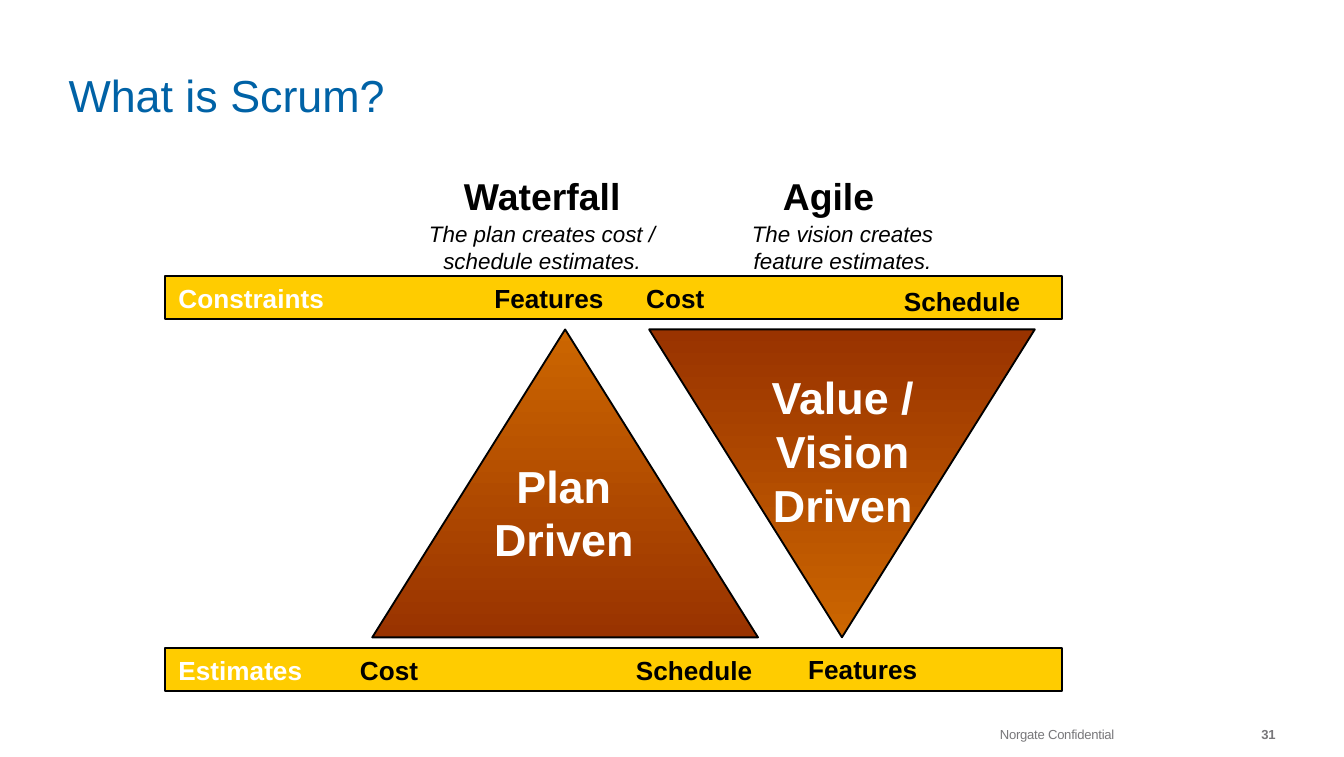
from pptx import Presentation
from pptx.dml.color import RGBColor
from pptx.enum.shapes import MSO_SHAPE
from pptx.enum.text import MSO_ANCHOR, PP_ALIGN
from pptx.util import Inches, Pt

BLACK = RGBColor(0x00, 0x00, 0x00)
WHITE = RGBColor(0xFF, 0xFF, 0xFF)
BLUE = RGBColor(0x00, 0x62, 0xA6)
GREY = RGBColor(0x78, 0x77, 0x7A)
YELLOW = RGBColor(0xFF, 0xCC, 0x00)
ORANGE = RGBColor(0xCC, 0x66, 0x00)
BROWN = RGBColor(0x99, 0x33, 0x00)

BAND_LEFT = 1.23
CONSTRAINTS_TOP = 2.05
ESTIMATES_TOP = 4.82


class SlideBuilder:
    """Holds the type style and the slide being drawn."""

    def __init__(self, slide, font_name="Arial"):
        self.slide = slide
        self.font_name = font_name

    def style(self, paragraph, size, color, bold=False, italic=False):
        font = paragraph.font
        font.name = self.font_name
        font.size = Pt(size)
        font.color.rgb = color
        font.bold = bold
        font.italic = italic

    def remove_margins(self, frame):
        frame.margin_left = frame.margin_right = 0
        frame.margin_top = frame.margin_bottom = 0

    def title(self, text, left, top, width, height):
        title = self.slide.shapes.title
        title.left, title.top = Inches(left), Inches(top)
        title.width, title.height = Inches(width), Inches(height)
        frame = title.text_frame
        frame.text = text
        frame.vertical_anchor = MSO_ANCHOR.BOTTOM
        self.remove_margins(frame)
        paragraph = frame.paragraphs[0]
        paragraph.alignment = PP_ALIGN.LEFT
        self.style(paragraph, 24, BLUE)

    def text(self, text, left, top, width, height, size, color=BLACK,
             bold=True, italic=False, align=PP_ALIGN.CENTER):
        box = self.slide.shapes.add_textbox(
            Inches(left), Inches(top), Inches(width), Inches(height))
        frame = box.text_frame
        frame.word_wrap = True
        frame.text = text
        paragraph = frame.paragraphs[0]
        paragraph.alignment = align
        self.style(paragraph, size, color, bold, italic)
        return box

    def footer(self, text, left, width, bold, align):
        box = self.text(text, left, 5.4, width, 0.12, 7, GREY, bold, align=align)
        self.remove_margins(box.text_frame)
        for span in box.text_frame.paragraphs[0].runs:
            span._r.get_or_add_rPr().set("spc", "-10")

    def outlined(self, kind, left, top, width, height):
        shape = self.slide.shapes.add_shape(
            kind, Inches(left), Inches(top), Inches(width), Inches(height))
        shape.shadow.inherit = False
        shape.line.color.rgb = BLACK
        shape.line.width = Pt(1)
        return shape

    def band(self, label, top):
        band = self.outlined(MSO_SHAPE.RECTANGLE, BAND_LEFT, top, 6.67, 0.32)
        band.fill.solid()
        band.fill.fore_color.rgb = YELLOW
        self.text(label, BAND_LEFT, top, 2.07, 0.34, 14, WHITE, align=PP_ALIGN.LEFT)

    def triangle(self, left, flipped=False):
        triangle = self.outlined(MSO_SHAPE.ISOSCELES_TRIANGLE, left, 2.45, 2.87, 2.29)
        triangle.fill.gradient()
        triangle.fill.gradient_angle = 270
        for stop, color in zip(triangle.fill.gradient_stops, (ORANGE, BROWN)):
            stop.color.rgb = color
        if flipped:
            triangle._element.spPr.xfrm.set("flipV", "1")


def main():
    deck = Presentation()
    deck.slide_width, deck.slide_height = Inches(10), Inches(5.63)
    page = SlideBuilder(deck.slides.add_slide(deck.slide_layouts[5]))

    page.footer("Norgate Confidential", 7.44, 1.06, False, PP_ALIGN.LEFT)
    page.footer("31", 8.44, 1.05, True, PP_ALIGN.RIGHT)
    page.title("What is Scrum?", 0.51, 0, 7.99, 0.9)

    page.triangle(2.77)
    page.text("Plan Driven", 3.53, 3.36, 1.33, 0.7, 24, WHITE)
    page.band("Constraints", CONSTRAINTS_TOP)
    page.band("Estimates", ESTIMATES_TOP)
    page.triangle(4.83, flipped=True)
    page.text("Value / Vision Driven", 5.3, 2.7, 1.94, 0.71, 24, WHITE)

    for label, left, top, width in (
        ("Features", 3.45, CONSTRAINTS_TOP, 1.27),
        ("Cost", 4.56, CONSTRAINTS_TOP, 0.93),
        ("Schedule", 6.48, CONSTRAINTS_TOP + 0.02, 1.36),
        ("Cost", 2.43, ESTIMATES_TOP, 0.93),
        ("Schedule", 4.5, ESTIMATES_TOP, 1.33),
        ("Features", 5.8, ESTIMATES_TOP - 0.01, 1.24),
    ):
        page.text(label, left, top, width, 0.34, 14)

    for name, name_left, summary, summary_left, width in (
        ("Waterfall", 3.3, "The plan creates cost / schedule estimates.", 2.77, 2.53),
        ("Agile", 5.43, "The vision creates feature estimates.", 5.3, 1.94),
    ):
        page.text(name, name_left, 1.24, 1.47, 0.34, 20)
        page.text(summary, summary_left, 1.59, width, 0.51, 12, bold=False, italic=True)

    deck.save("out.pptx")


if __name__ == "__main__":
    main()
